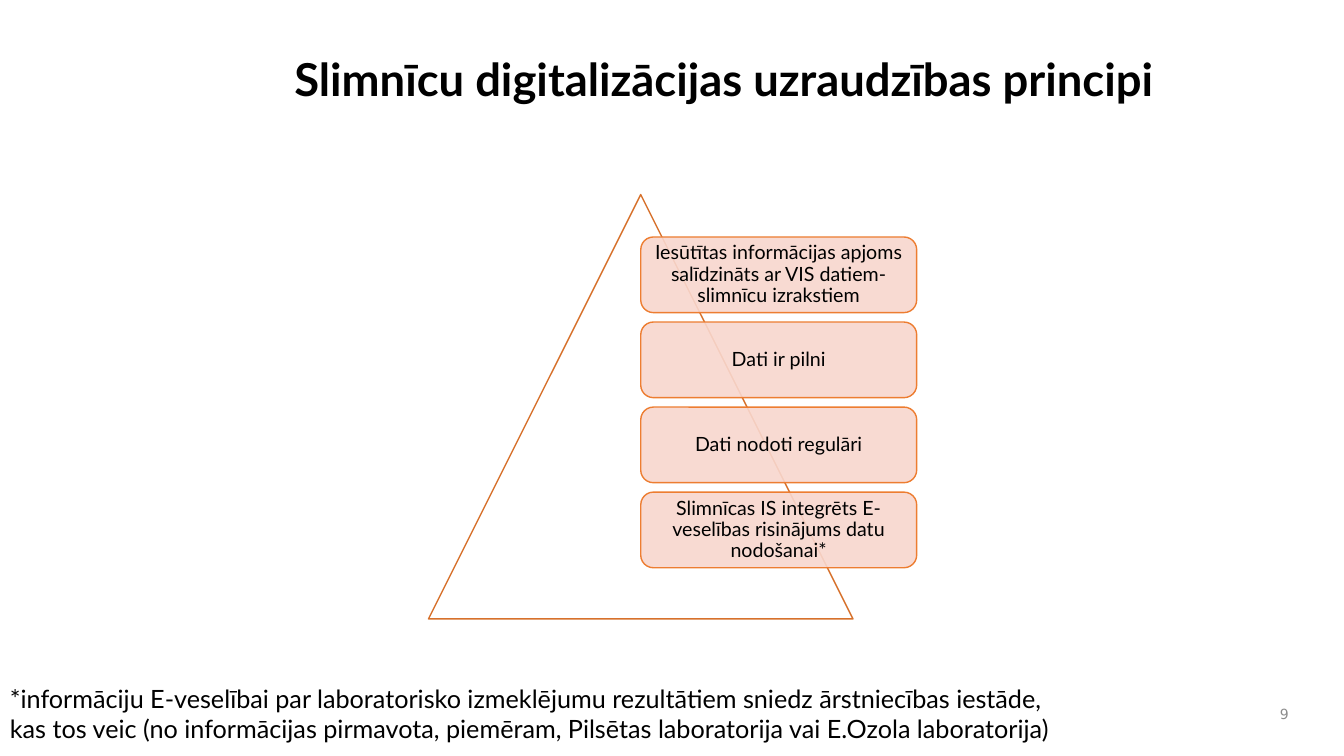
from lxml import etree
from pptx import Presentation
from pptx.dml.color import RGBColor
from pptx.enum.shapes import MSO_SHAPE
from pptx.enum.text import MSO_ANCHOR, PP_ALIGN
from pptx.oxml.ns import qn
from pptx.util import Inches, Pt

TRIANGLE, ROUNDED = MSO_SHAPE.ISOSCELES_TRIANGLE, MSO_SHAPE.ROUNDED_RECTANGLE
TOP, MIDDLE = MSO_ANCHOR.TOP, MSO_ANCHOR.MIDDLE
LEFT, CENTER, RIGHT = PP_ALIGN.LEFT, PP_ALIGN.CENTER, PP_ALIGN.RIGHT

# Content
TITLE = "Slimnīcu digitalizācijas uzraudzības principi"
PRINCIPLES = [
    "Iesūtītas informācijas apjoms salīdzināts ar VIS datiem- slimnīcu izrakstiem",
    "Dati ir pilni",
    "Dati nodoti regulāri",
    "Slimnīcas IS integrēts E- veselības risinājums datu nodošanai*",
]
FOOTNOTE = (
    "*informāciju E-veselībai par laboratorisko izmeklējumu rezultātiem sniedz "
    "ārstniecības iestāde, kas tos veic (no informācijas pirmavota, piemēram, "
    "Pilsētas laboratorija vai E.Ozola laboratorija)"
)
PAGE_NUMBER = "9"

# Style
COLORS = {"text": "000000", "number": "8C8C8C", "paper": "FFFFFF",
          "triangle": "D7712C", "card": "F8D7CE", "edge": "ED7D31"}
FONT, NUMBER_FONT = "Lato", "DejaVu Sans"
CARD_OPACITY = 90

# Layout in inches: the cards start at the triangle's axis
TRIANGLE_LEFT, TRIANGLE_TOP, TRIANGLE_SIDE = 4.25, 1.93, 4.21
CARD_LEFT = TRIANGLE_LEFT + TRIANGLE_SIDE / 2
CARD_TOP = TRIANGLE_TOP + TRIANGLE_SIDE / 10
CARD_WIDTH = TRIANGLE_SIDE * 0.65
CARD_HEIGHT = 0.75
CARD_PITCH = CARD_HEIGHT * 9 / 8


def color(name):
    return RGBColor.from_string(COLORS[name])


def write(frame, text, size, align=LEFT, anchor=TOP, spacing=1.0, bold=False,
          name=FONT, ink="text"):
    frame.word_wrap = True
    frame.vertical_anchor = anchor
    para = frame.paragraphs[0]
    para.alignment, para.line_spacing = align, spacing
    span = para.add_run()
    span.text = text
    span.font.name, span.font.size, span.font.bold = name, Pt(size), bold
    span.font.color.rgb = color(ink)


def add_outlined(page, kind, box, fill, line):
    shape = page.shapes.add_shape(kind, *map(Inches, box))
    shape.shadow.inherit = False
    shape.fill.solid()
    shape.fill.fore_color.rgb = color(fill)
    shape.line.color.rgb = color(line)
    shape.line.width = Pt(1)
    return shape


def add_card(page, row, text):
    box = (CARD_LEFT, CARD_TOP + row * CARD_PITCH, CARD_WIDTH, CARD_HEIGHT)
    card = add_outlined(page, ROUNDED, box, "card", "edge")
    tint = card.element.spPr.find(qn("a:solidFill"))[0]
    etree.SubElement(tint, qn("a:alpha")).set("val", str(CARD_OPACITY * 1000))
    frame = card.text_frame
    frame.margin_left = frame.margin_right = Inches(0.1)
    frame.margin_top = frame.margin_bottom = Inches(0.05)
    write(frame, text, 14, CENTER, MIDDLE, 0.9)


def main():
    deck = Presentation()
    deck.slide_width, deck.slide_height = Inches(13.33), Inches(7.5)
    page = deck.slides.add_slide(deck.slide_layouts[5])

    # Title
    title = page.shapes.title
    title.left, title.top, title.width, title.height = map(
        Inches, (2.82, 0.52, 8.89, 1.13))
    write(title.text_frame, TITLE, 32.4, spacing=0.9, bold=True)

    # Pyramid of principles
    add_outlined(page, TRIANGLE,
                 (TRIANGLE_LEFT, TRIANGLE_TOP, TRIANGLE_SIDE, TRIANGLE_SIDE),
                 "paper", "triangle")
    for row, principle in enumerate(PRINCIPLES):
        add_card(page, row, principle)

    # Footnote and page number
    footnote = page.shapes.add_textbox(*map(Inches, (0, 6.73, 10.69, 0.71)))
    write(footnote.text_frame, FOOTNOTE, 18)
    number = page.shapes.add_textbox(*map(Inches, (12.44, 6.92, 0.44, 0.33)))
    write(number.text_frame, PAGE_NUMBER, 10, RIGHT, MIDDLE,
          name=NUMBER_FONT, ink="number")

    deck.save("out.pptx")


if __name__ == "__main__":
    main()
